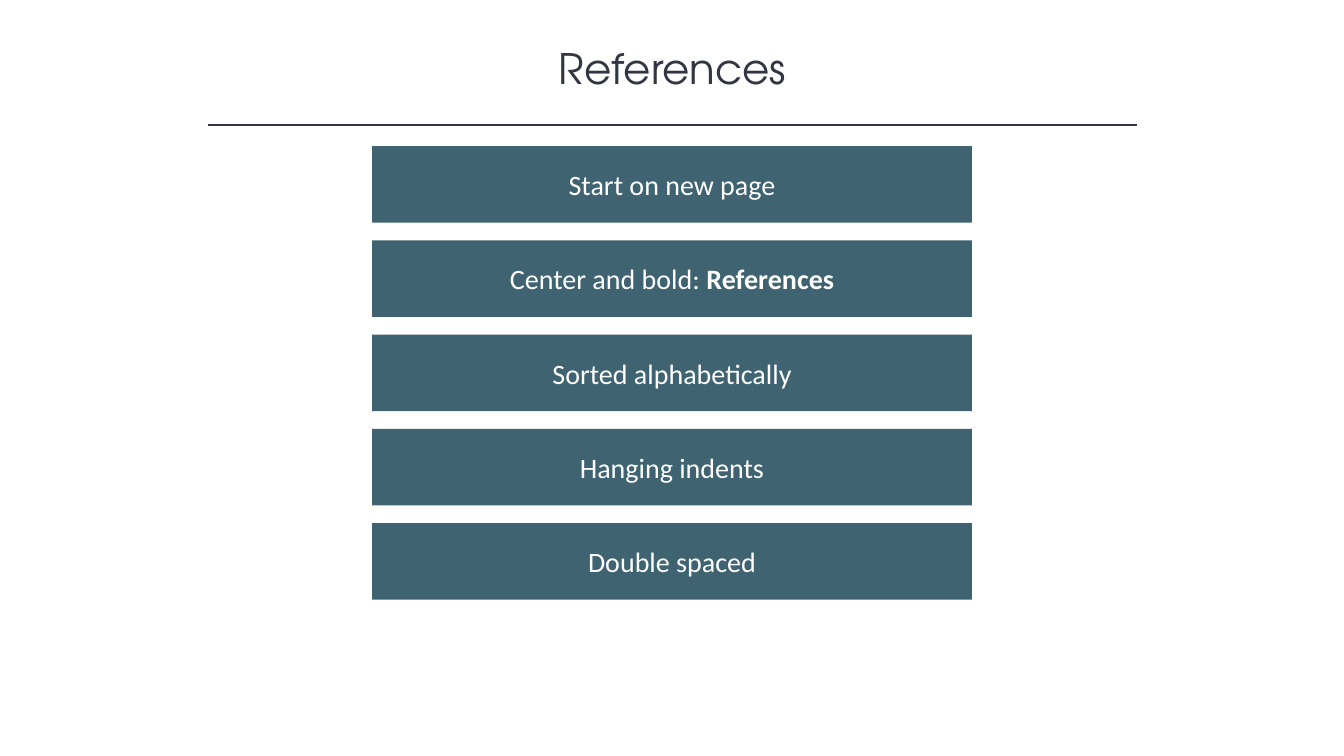
"""Build the References checklist slide."""
from dataclasses import dataclass

from lxml import etree
from pptx import Presentation
from pptx.dml.color import RGBColor
from pptx.enum.shapes import MSO_CONNECTOR, MSO_SHAPE
from pptx.enum.text import MSO_ANCHOR, PP_ALIGN
from pptx.oxml.ns import qn
from pptx.util import Inches, Pt

STRAIGHT = MSO_CONNECTOR.STRAIGHT
RECTANGLE = MSO_SHAPE.RECTANGLE
MIDDLE = MSO_ANCHOR.MIDDLE
CENTER = PP_ALIGN.CENTER


@dataclass(frozen=True)
class Theme:
    """Colours, fonts and sizes of the slide."""
    ink: RGBColor = RGBColor(0x32, 0x35, 0x42)
    bar: RGBColor = RGBColor(0x3F, 0x63, 0x71)
    white: RGBColor = RGBColor(0xFF, 0xFF, 0xFF)
    heading_font: str = "TeX Gyre Adventor"
    body_font: str = "Calibri"
    heading_size: Pt = Pt(30)
    body_size: Pt = Pt(20)
    rule_width: Pt = Pt(1)


THEME = Theme()
RULES = [
    [("Start on new page", False)],
    [("Center and bold: ", False), ("References", True)],
    [("Sorted alphabetically", False)],
    [("Hanging indents", False)],
    [("Double spaced", False)],
]


def style_run(run, font_name, size, color, bold=False):
    """Give a run its font, size, colour and weight."""
    run.font.name = font_name
    run.font.size = size
    run.font.color.rgb = color
    run.font.bold = bold


def add_heading(slide, text, left, top, width, height):
    """Place the title in its box with a rule below it."""
    title = slide.shapes.title
    title.left, title.top = Inches(left), Inches(top)
    title.width, title.height = Inches(width), Inches(height)
    frame = title.text_frame
    frame.text = text
    frame.vertical_anchor = MIDDLE
    paragraph = frame.paragraphs[0]
    paragraph.alignment = CENTER
    style_run(paragraph.runs[0], THEME.heading_font, THEME.heading_size, THEME.ink)

    rule_y = Inches(top + height + 0.26)
    rule = slide.shapes.add_connector(
        STRAIGHT, Inches(left + 0.39), rule_y, Inches(left + width - 0.39), rule_y)
    rule.line.color.rgb = THEME.ink
    rule.line.width = THEME.rule_width
    etree.SubElement(rule._element.spPr, qn("a:effectLst"))


def add_rule_bars(slide, rules, left, top, width, height, gap):
    """Stack one bar per rule in the box, separated by equal gaps."""
    bar_height = (height - gap * (len(rules) - 1)) / len(rules)
    for row, parts in enumerate(rules):
        bar = slide.shapes.add_shape(
            RECTANGLE, Inches(left), Inches(top + row * (bar_height + gap)),
            Inches(width), Inches(bar_height))
        bar.shadow.inherit = False
        bar.fill.solid()
        bar.fill.fore_color.rgb = THEME.bar
        bar.line.fill.background()
        frame = bar.text_frame
        frame.word_wrap = True
        frame.vertical_anchor = MIDDLE
        paragraph = frame.paragraphs[0]
        paragraph.alignment = CENTER
        for text, bold in parts:
            run = paragraph.add_run()
            run.text = text
            style_run(run, THEME.body_font, THEME.body_size, THEME.white, bold)


def main():
    """Build and save the presentation."""
    deck = Presentation()
    deck.slide_width, deck.slide_height = Inches(13.33), Inches(7.5)
    slide = deck.slides.add_slide(deck.slide_layouts[5])
    add_heading(slide, "References", 1.67, 0.37, 10, 0.61)
    add_rule_bars(slide, RULES, 3.69, 1.45, 5.95, 4.5, gap=0.175)
    deck.save("out.pptx")


if __name__ == "__main__":
    main()
